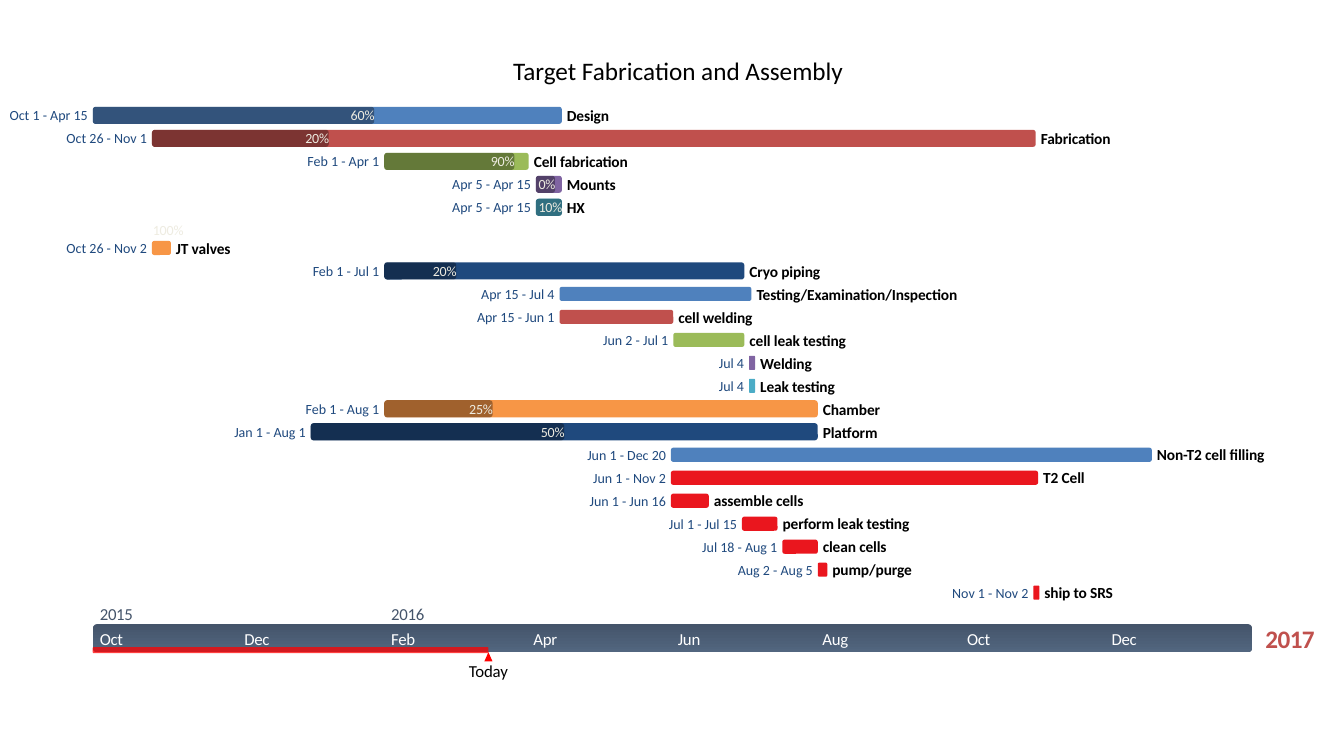
import pptx
import pptx.util
import pptx.dml.color
import pptx.enum.shapes
import pptx.enum.text
import pptx.oxml
import pptx.oxml.ns

Inches = pptx.util.Inches
Pt = pptx.util.Pt
RGB = pptx.dml.color.RGBColor
SHAPE = pptx.enum.shapes.MSO_SHAPE
ALIGN = pptx.enum.text.PP_ALIGN

BLUE = RGB(0x4F, 0x81, 0xBD)
BRICK = RGB(0xC0, 0x50, 0x4D)
GREEN = RGB(0x9B, 0xBB, 0x59)
PURPLE = RGB(0x80, 0x64, 0xA2)
TEAL = RGB(0x4B, 0xAC, 0xC6)
ORANGE = RGB(0xF7, 0x96, 0x46)
NAVY = RGB(0x1F, 0x49, 0x7D)
RED = RGB(0xEA, 0x16, 0x1E)
BRIGHT = RGB(0xFF, 0x00, 0x00)
SLATE = RGB(0x44, 0x54, 0x6A)
STEEL = RGB(0x52, 0x66, 0x7F)
DATE = RGB(0x1F, 0x49, 0x7E)
CREAM = RGB(0xEE, 0xEC, 0xE1)
BLACK = RGB(0x00, 0x00, 0x00)
WHITE = RGB(0xFF, 0xFF, 0xFF)

# Content: dates, first day, day after the last, name, colour, percent done
# Days count from October 1, 2015
TITLE = "Target Fabrication and Assembly"
TASKS = [
    ("Oct 1 - Apr 15", 0, 198, "Design", BLUE, 60),
    ("Oct 26 - Nov 1", 25, 398, "Fabrication", BRICK, 20),
    ("Feb 1 - Apr 1", 123, 184, "Cell fabrication", GREEN, 90),
    ("Apr 5 - Apr 15", 187, 198, "Mounts", PURPLE, 0),
    ("Apr 5 - Apr 15", 187, 198, "HX", TEAL, 10),
    ("Oct 26 - Nov 2", 25, 33, "JT valves", ORANGE, 100),
    ("Feb 1 - Jul 1", 123, 275, "Cryo piping", NAVY, 20),
    ("Apr 15 - Jul 4", 197, 278, "Testing/Examination/Inspection", BLUE, None),
    ("Apr 15 - Jun 1", 197, 245, "cell welding", BRICK, None),
    ("Jun 2 - Jul 1", 245, 275, "cell leak testing", GREEN, None),
    ("Jul 4", 277, 278, "Welding", PURPLE, None),
    ("Jul 4", 277, 278, "Leak testing", TEAL, None),
    ("Feb 1 - Aug 1", 123, 306, "Chamber", ORANGE, 25),
    ("Jan 1 - Aug 1", 92, 306, "Platform", NAVY, 50),
    ("Jun 1 - Dec 20", 244, 447, "Non-T2 cell filling", BLUE, None),
    ("Jun 1 - Nov 2", 244, 399, "T2 Cell", RED, None),
    ("Jun 1 - Jun 16", 244, 260, "assemble cells", RED, None),
    ("Jul 1 - Jul 15", 274, 289, "perform leak testing", RED, None),
    ("Jul 18 - Aug 1", 291, 306, "clean cells", RED, None),
    ("Aug 2 - Aug 5", 306, 310, "pump/purge", RED, None),
    ("Nov 1 - Nov 2", 397, 399, "ship to SRS", RED, None),
]
MONTHS = [("Oct", 0), ("Dec", 61), ("Feb", 123), ("Apr", 183),
          ("Jun", 244), ("Aug", 305), ("Oct", 366), ("Dec", 427)]
YEARS = [("2015", 0), ("2016", 123)]
TODAY = 167

# Layout in inches
LEFT, SPAN, DAY = 0.92, 11.5, 0.0235
FIRST, PITCH = 1.145, 0.228
LIFT, LIFTED = 0.175, 5     # extra room above this row
GAP = 0.05

deck = pptx.Presentation()
deck.slide_width, deck.slide_height = Inches(13.33), Inches(7.5)
slide = deck.slides.add_slide(deck.slide_layouts[5])


def spot(day):
    return LEFT + day * DAY


def draw(kind, x, y, w, h, color, alpha=None):
    item = slide.shapes.add_shape(kind, Inches(x), Inches(y), Inches(w), Inches(h))
    item.shadow.inherit = False
    item.line.fill.background()
    item.fill.solid()
    item.fill.fore_color.rgb = color
    if alpha is not None:
        tint = item.fill._xPr.find(".//" + pptx.oxml.ns.qn("a:srgbClr"))
        tint.append(pptx.oxml.parse_xml(
            f'<a:alpha {pptx.oxml.ns.nsdecls("a")} val="{alpha * 1000}"/>'))
    return item


def style(par, size, color, align, bold=False):
    par.alignment = align
    font = par.font
    font.name, font.size, font.bold = "Calibri", Pt(size), bold
    font.color.rgb = color


def write(text, x, mid, w, size, color, align=ALIGN.LEFT, bold=False, tight=0):
    h = size * 0.017
    box = slide.shapes.add_textbox(Inches(x), Inches(mid - h / 2), Inches(w), Inches(h))
    frame = box.text_frame
    frame.margin_left = frame.margin_right = frame.margin_top = frame.margin_bottom = 0
    frame.vertical_anchor = pptx.enum.text.MSO_ANCHOR.MIDDLE
    frame.word_wrap = True
    par = frame.paragraphs[0]
    run = par.add_run()
    run.text = text
    if tight:
        run.font._element.set("spc", str(-tight))
    style(par, size, color, align, bold)


# Title
head = slide.shapes.title
head.left, head.top, head.width, head.height = map(Inches, (2.5, 0.5, 8.45, 0.4))
head.text_frame.text = TITLE
head.text_frame.vertical_anchor = pptx.enum.text.MSO_ANCHOR.MIDDLE
style(head.text_frame.paragraphs[0], 18, BLACK, ALIGN.CENTER)

# Time axis
axis = draw(SHAPE.ROUNDED_RECTANGLE, LEFT, 6.19, SPAN, 0.28, SLATE)
axis.fill.gradient()
axis.fill.gradient_angle = 270
for stop, color in zip(axis.fill.gradient_stops, (SLATE, STEEL)):
    stop.color.rgb = color
for text, day in MONTHS:
    write(text, spot(day) + 0.07, 6.335, 0.35, 12, WHITE, tight=20)
for text, day in YEARS:
    write(text, spot(day) + 0.07, 6.09, 0.4, 12, SLATE, tight=20)
write("2017", 12.52, 6.335, 0.55, 18, BRICK, ALIGN.CENTER, True, 40)

# Time gone by and today's mark
now = spot(TODAY)
draw(SHAPE.ROUNDED_RECTANGLE, LEFT, 6.42, now - LEFT, 0.06, BRIGHT, 75)
draw(SHAPE.ISOSCELES_TRIANGLE, now - 0.04, 6.47, 0.08, 0.09, BRIGHT)
write("Today", now - 0.25, 6.66, 0.5, 12, BLACK, ALIGN.CENTER, tight=10)

# Task rows
for row, (dates, start, end, name, color, done) in enumerate(TASKS):
    mid = FIRST + row * PITCH + (LIFT if row >= LIFTED else 0)
    x = spot(start)
    w = max((end - start) * DAY, 0.06)
    note = f"{done}%"
    wide = 0.04 + 0.07 * len(note)
    shaded = done is not None and wide <= w
    h = 0.17 if shaded else 0.14
    draw(SHAPE.ROUNDED_RECTANGLE, x, mid - h / 2, w, h, color)
    write(dates, x - GAP - 0.82, mid, 0.82, 10, DATE, ALIGN.RIGHT)
    write(name, x + w + GAP, mid, 0.14 + 0.065 * len(name), 11, BLACK,
          bold=True, tight=10)
    if shaded:
        part = max(w * done / 100, wide + 0.01)
        draw(SHAPE.ROUNDED_RECTANGLE, x, mid - h / 2, part, h, BLACK, 35)
        write(note, x + part + 0.01 - wide, mid, wide, 10, CREAM, ALIGN.CENTER, tight=10)
    elif done is not None:
        write(note, x, mid - LIFT, wide, 10, CREAM, ALIGN.CENTER, tight=10)

deck.save("out.pptx")
